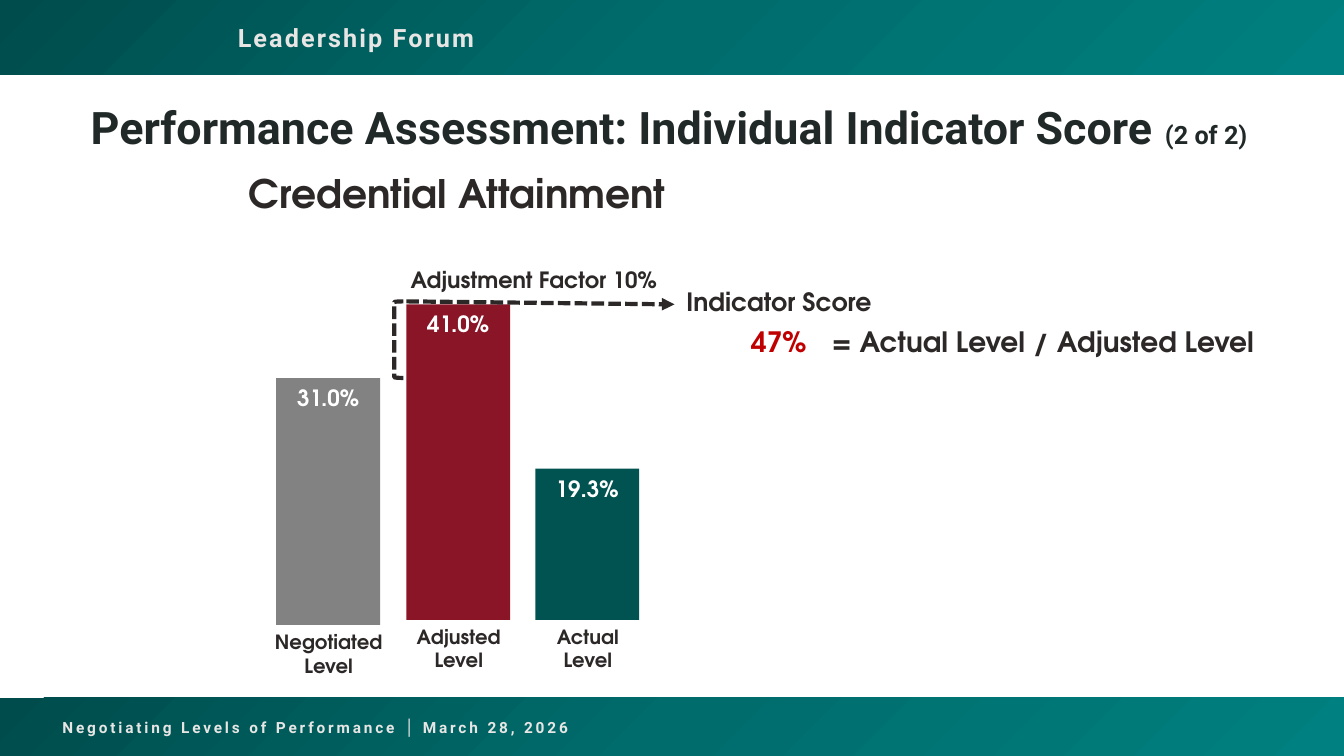
import copy
import pptx
import pptx.util
import pptx.dml.color
import pptx.enum.dml
import pptx.enum.shapes
import pptx.enum.text
import pptx.oxml.ns
import lxml.etree

Inches = pptx.util.Inches
Pt = pptx.util.Pt
Shape = pptx.enum.shapes.MSO_SHAPE
Align = pptx.enum.text.PP_ALIGN
qn = pptx.oxml.ns.qn

HEAD, BODY = "Roboto", "TeX Gyre Adventor"
DARK, PALE = "2D2828", "E7E6E5"


def color(code):
    return pptx.dml.color.RGBColor.from_string(code)


def label(box, text, size, ink=DARK, font=BODY, align=Align.CENTER):
    frame = slide.shapes.add_textbox(*map(Inches, box)).text_frame
    frame.word_wrap = True
    frame.text = text
    for para in frame.paragraphs:
        para.alignment = align
        for run in para.runs:
            run.font.size = Pt(size)
            run.font.name = font
            run.font.bold = True
            run.font.color.rgb = color(ink)
    return frame


deck = pptx.Presentation()
deck.slide_width, deck.slide_height = Inches(13.33), Inches(7.5)
slide = deck.slides.add_slide(deck.slide_layouts[5])

# Footer and header bands: top, height, text, text box, size, letter spacing
bands = [
    (6.92, 0.58, "Negotiating Levels of Performance │ March 28, 2026",
     (0.52, 7.07, 6.79, 0.29), 11, 2),
    (0, 0.74, "Leadership Forum", (2.26, 0.17, 5.89, 0.4), 18, 1.5),
]
for top, high, text, box, size, space in bands:
    band = slide.shapes.add_shape(
        Shape.RECTANGLE, 0, Inches(top), Inches(13.33), Inches(high))
    band.shadow.inherit = False
    band.line.fill.background()
    band.fill.gradient()
    band.fill.gradient_angle = 315
    first = band._element.spPr.find(".//" + qn("a:gs"))
    first.addnext(copy.deepcopy(first))
    shades = [(0, "004C4C"), (0.5, "006C6C"), (1, "008080")]
    for stop, (place, shade) in zip(band.fill.gradient_stops, shades):
        stop.position = place
        stop.color.rgb = color(shade)
    frame = label(box, text, size, PALE, HEAD, Align.LEFT)
    font = frame.paragraphs[0].runs[0].font
    font._element.set("spc", str(int(space * 100)))

# Title
title = slide.shapes.title
title.left, title.top = Inches(0.8), Inches(1)
title.width, title.height = Inches(11.73), Inches(0.58)
frame = title.text_frame
frame.auto_size = pptx.enum.text.MSO_AUTO_SIZE.NONE
frame.vertical_anchor = pptx.enum.text.MSO_ANCHOR.BOTTOM
frame.text = "Performance Assessment: Individual Indicator Score "
para = frame.paragraphs[0]
para.alignment = Align.LEFT
para.line_spacing = 0.9
para.add_run().text = "(2 of 2)"
for run, size in zip(para.runs, (32, 18)):
    run.font.size = Pt(size)
    run.font.name = HEAD
    run.font.bold = True
    run.font.color.rgb = color("202828")

label((1.83, 1.63, 5.41, 0.57), "Credential Attainment", 28)

# Bars with value and name: left, top, height, fill
bars = [
    ("Negotiated", "31.0%", 2.74, 3.75, 2.45, "828282"),
    ("Adjusted", "41.0%", 4.03, 3.02, 3.13, "891526"),
    ("Actual", "19.3%", 5.31, 4.65, 1.5, "005350"),
]
wide = 1.03
for name, value, left, top, high, shade in bars:
    bar = slide.shapes.add_shape(
        Shape.RECTANGLE, *map(Inches, (left, top, wide, high)))
    bar.shadow.inherit = False
    bar.fill.solid()
    bar.fill.fore_color.rgb = color(shade)
    bar.line.fill.background()
    label((left, top + 0.01, wide, 0.37), value, 16, "FFFFFF")
    label((left - 0.22, top + high, 1.48, 0.57), name + "\nLevel", 14)

# Adjustment bracket and arrow
label((3.91, 2.59, 2.77, 0.37), "Adjustment Factor 10%", 16)
brace = slide.shapes.add_shape(
    Shape.LEFT_BRACKET, *map(Inches, (3.91, 2.99, 0.09, 0.76)))
brace.shadow.inherit = False
brace.fill.background()
arrow = slide.shapes.add_connector(
    pptx.enum.shapes.MSO_CONNECTOR.STRAIGHT,
    *map(Inches, (4.03, 2.99, 6.69, 3.02)))
for mark in (brace, arrow):
    mark.line.color.rgb = color(DARK)
    mark.line.width = Pt(3)
    mark.line.dash_style = pptx.enum.dml.MSO_LINE.SQUARE_DOT
tail = lxml.etree.SubElement(arrow.line._get_or_add_ln(), qn("a:tailEnd"))
tail.set("type", "triangle")
lxml.etree.SubElement(arrow._element.spPr, qn("a:effectLst"))

# Indicator score
frame = label((6.69, 2.79, 2.07, 0.82), "Indicator Score\n47%", 18)
score = frame.paragraphs[1]
score.space_before = Pt(6)
score.runs[0].font.size = Pt(20)
score.runs[0].font.color.rgb = color("C00000")
label((8.15, 3.17, 4.46, 0.44), "= Actual Level / Adjusted Level", 20,
      align=Align.LEFT)

deck.save("out.pptx")
